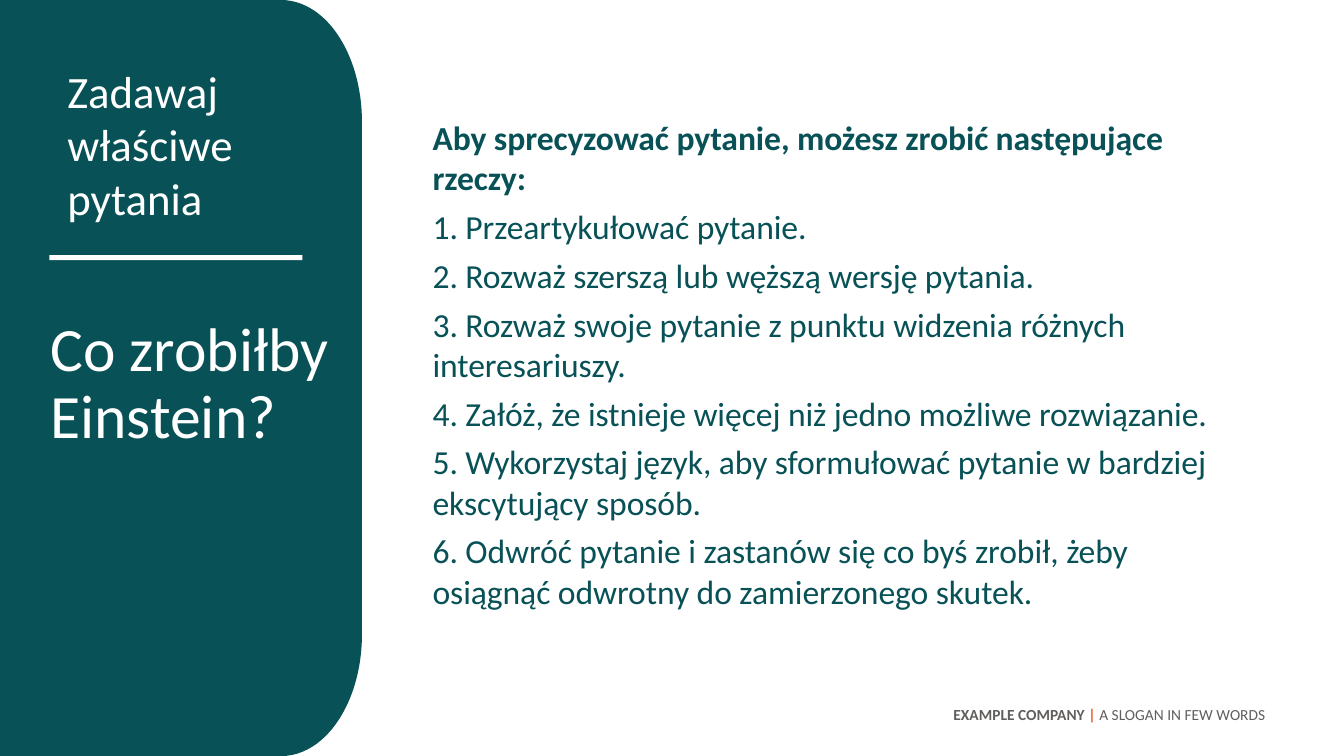
from dataclasses import dataclass

from lxml import etree
from pptx import Presentation
from pptx.dml.color import RGBColor
from pptx.enum import shapes, text
from pptx.oxml import ns
from pptx.util import Inches, Pt


@dataclass(frozen=True)
class Theme:
    font: str = "Calibri"
    teal: str = "085156"
    white: str = "FFFFFF"
    grey: str = "615F5D"
    orange: str = "F15A2A"
    title_size: int = 44
    topic_size: int = 32
    body_size: int = 24
    footer_size: int = 11


theme = Theme()


def add_block(kind, box, color):
    block = slide.shapes.add_shape(kind, *map(Inches, box))
    block.shadow.inherit = False
    block.fill.solid()
    block.fill.fore_color.rgb = RGBColor.from_string(color)
    block.line.fill.background()
    return block


def style_run(run, size, color, bold=False):
    run.font.name = theme.font
    run.font.size = Pt(size)
    run.font.bold = bold
    run.font.color.rgb = RGBColor.from_string(color)


prs = Presentation()
prs.slide_width, prs.slide_height = Inches(13.33), Inches(7.5)
slide = prs.slides.add_slide(prs.slide_layouts[1])
title, steps = slide.placeholders

# Side panel with a rounded right edge, and the divider
panel = add_block(shapes.MSO_SHAPE.RECTANGLE, (0, 0, 2.8, 7.5), theme.teal)
panel_edge = add_block(shapes.MSO_SHAPE.FLOWCHART_TERMINATOR,
                       (-0.96, 2.95, 7.5, 1.6), theme.teal)
panel_edge.rotation = 270
divider = add_block(shapes.MSO_SHAPE.RECTANGLE, (0.49, 2.53, 2.51, 0.05), theme.white)
for block in (panel, panel_edge, divider):
    title.element.addprevious(block.element)  # behind the title

# Text areas
footer = slide.shapes.add_textbox(0, 0, 0, 0)
topic = slide.shapes.add_textbox(0, 0, 0, 0)
for area, box in (
    (title, (0.4, 3.11, 2.98, 3.98)),
    (steps, (4.19, 1.11, 8.12, 5.05)),
    (topic, (0.57, 0.58, 2.43, 1.72)),
    (footer, (0.57, 6.95, 12.08, 0.45)),
):
    area.left, area.top, area.width, area.height = map(Inches, box)
    area.text_frame.word_wrap = True
    area.text_frame.auto_size = text.MSO_AUTO_SIZE.NONE
    area.text_frame.vertical_anchor = text.MSO_ANCHOR.TOP

# Title and topic
for area, wording, size in (
    (title, "Co zrobiłby Einstein?", theme.title_size),
    (topic, "Zadawaj właściwe pytania", theme.topic_size),
):
    area.text_frame.text = wording
    line = area.text_frame.paragraphs[0]
    line.alignment = text.PP_ALIGN.LEFT
    style_run(line.runs[0], size, theme.white)
title.text_frame.paragraphs[0].line_spacing = 0.9
title.text_frame.paragraphs[0].space_before = Pt(10)

# Steps under a bold lead-in
steps.text_frame.text = "\n".join([
    "Aby sprecyzować pytanie, możesz zrobić następujące rzeczy:",
    "1. Przeartykułować pytanie.",
    "2. Rozważ szerszą lub węższą wersję pytania.",
    "3. Rozważ swoje pytanie z punktu widzenia różnych interesariuszy.",
    "4. Załóż, że istnieje więcej niż jedno możliwe rozwiązanie.",
    "5. Wykorzystaj język, aby sformułować pytanie w bardziej ekscytujący sposób.",
    "6. Odwróć pytanie i zastanów się co byś zrobił, żeby osiągnąć odwrotny do "
    "zamierzonego skutek.",
])
for number, step in enumerate(steps.text_frame.paragraphs):
    step.space_before = Pt(6 if number else 0)
    style_run(step.runs[0], theme.body_size, theme.teal, bold=number == 0)
    step.runs[0]._r.get_or_add_rPr().set("spc", "-5")
    # No bullet and no hanging indent
    properties = step._p.get_or_add_pPr()
    properties.set("marL", "0")
    properties.set("indent", "0")
    etree.SubElement(properties, ns.qn("a:buNone"))

# Footer
credit = footer.text_frame.paragraphs[0]
credit.alignment = text.PP_ALIGN.RIGHT
for wording, color, bold in (
    ("EXAMPLE COMPANY ", theme.grey, True),
    ("|", theme.orange, True),
    (" A SLOGAN IN FEW WORDS", theme.grey, False),
):
    part = credit.add_run()
    part.text = wording
    style_run(part, theme.footer_size, color, bold)

prs.save("out.pptx")
